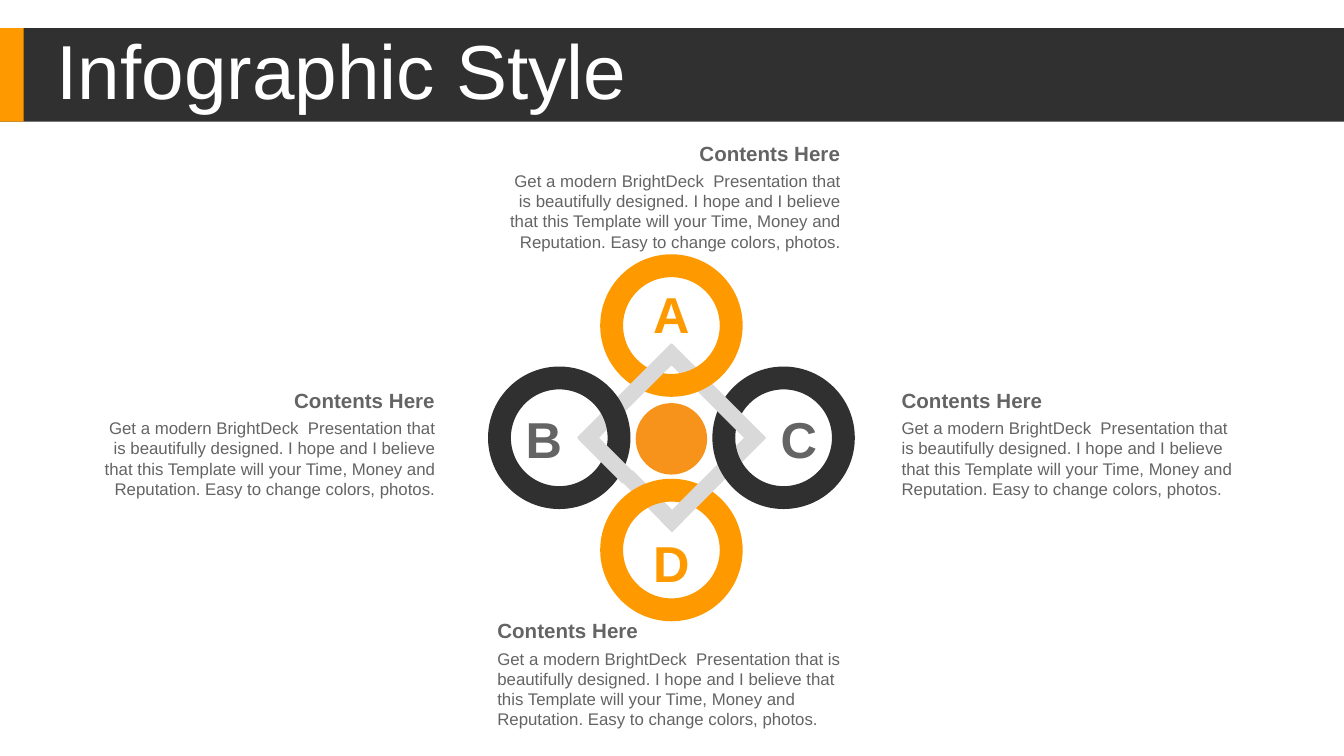
"""Build a slide with four linked rings around a disc, each ring with a caption."""
from pptx import Presentation
from pptx.dml.color import RGBColor
from pptx.enum.shapes import MSO_SHAPE
from pptx.enum.text import MSO_ANCHOR, PP_ALIGN
from pptx.util import Cm, Pt

ORANGE = RGBColor(0xFE, 0x99, 0x00)
COIN = RGBColor(0xF7, 0x93, 0x1A)
DARK = RGBColor(0x30, 0x30, 0x30)
GREY = RGBColor(0x64, 0x64, 0x64)
LIGHT = RGBColor(0xD9, 0xD9, 0xD9)
WHITE = RGBColor(0xFF, 0xFF, 0xFF)

MID_X, MID_Y = 12.69, 8.27
HEAD = "Contents Here"
BODY = ("Get a modern BrightDeck  Presentation that is beautifully designed. "
        "I hope and I believe that this Template will your Time, Money and "
        "Reputation. Easy to change colors, photos.")


class Painter:
    def __init__(self, slide, font="Arial"):
        self.slide = slide
        self.font = font

    def style(self, frame, text, size, color, bold=False, align=PP_ALIGN.LEFT):
        frame.text = text
        frame.word_wrap = True
        line = frame.paragraphs[0]
        line.alignment = align
        for run in line.runs:
            font = run.font
            font.name, font.size, font.bold = self.font, Pt(size), bold
            font.color.rgb = color

    def title(self, text, left, top, width, height):
        title = self.slide.shapes.title
        title.left, title.top = Cm(left), Cm(top)
        title.width, title.height = Cm(width), Cm(height)
        frame = title.text_frame
        self.style(frame, text, 41, WHITE)
        frame.vertical_anchor = MSO_ANCHOR.MIDDLE
        frame.margin_left = frame.margin_right = Cm(0.18)
        frame.margin_top = frame.margin_bottom = Cm(0.1)
        frame.paragraphs[0].line_spacing = 0.9
        title.element.getparent().append(title.element)

    def shape(self, kind, left, top, width, height, fill=None):
        shape = self.slide.shapes.add_shape(
            kind, Cm(left), Cm(top), Cm(width), Cm(height))
        shape.shadow.inherit = False
        shape.line.fill.background()
        if fill is None:
            shape.fill.background()
        else:
            shape.fill.solid()
            shape.fill.fore_color.rgb = fill
        return shape

    def rect(self, left, top, width, height, fill):
        return self.shape(MSO_SHAPE.RECTANGLE, left, top, width, height, fill)

    def disc(self, x, y, size, fill=None):
        return self.shape(MSO_SHAPE.OVAL, MID_X + x - size / 2,
                          MID_Y + y - size / 2, size, size, fill)

    def ring(self, x, y, color):
        ring = self.disc(x, y, 2.26)
        ring.line.color.rgb = color
        ring.line.width = Pt(12.25)

    def bar(self, x, y, length, angle):
        thick = 0.3
        bar = self.rect(MID_X + x - length / 2, MID_Y + y - thick / 2,
                        length, thick, LIGHT)
        bar.rotation = angle

    def label(self, text, left, top, width, height, size, color, **style):
        box = self.slide.shapes.add_textbox(
            Cm(left), Cm(top), Cm(width), Cm(height))
        self.style(box.text_frame, text, size, color, **style)
        return box.text_frame

    def letter(self, text, x, y, color):
        wide, high = 1.02, 1.14
        frame = self.label(text, MID_X + x - wide / 2, MID_Y + y - high / 2,
                           wide, high, 27, color, bold=True,
                           align=PP_ALIGN.CENTER)
        frame.margin_left = frame.margin_right = 0
        frame.margin_top = frame.margin_bottom = 0

    def caption(self, left, top, width, align):
        self.label(BODY, left, top + 0.57, width, 1.8, 9, GREY, align=align)
        self.label(HEAD, left, top, width, 0.74, 11, GREY, bold=True,
                   align=align)


def main():
    deck = Presentation()
    deck.slide_width, deck.slide_height = Cm(25.4), Cm(14.28)
    paint = Painter(deck.slides.add_slide(deck.slide_layouts[5]))

    paint.rect(0, 0.53, 25.4, 1.77, DARK)
    paint.rect(0, 0.53, 0.45, 1.77, ORANGE)
    paint.title("Infographic Style", 0.89, 0.66, 18.47, 1.5)

    gap, side = 2.12, 0.79
    paint.bar(-0.36, 1.2, 1.35, 45)
    paint.ring(0, gap, ORANGE)
    paint.bar(side, side, 2.51, 135)
    paint.ring(gap, 0, DARK)
    paint.bar(side, -side, 2.51, 45)
    paint.ring(0, -gap, ORANGE)
    paint.bar(-side, -side, 2.51, 315)
    paint.ring(-gap, 0, DARK)
    paint.bar(-1.24, 0.34, 1.19, 45)

    for text, x, y, color in (("A", 0, -2.36, ORANGE), ("C", 2.41, 0, GREY),
                              ("B", -2.41, 0, GREY), ("D", 0, 2.36, ORANGE)):
        paint.letter(text, x, y, color)

    for left, top, width, align in (
            (16.79, 7.2, 6.81, PP_ALIGN.LEFT),
            (9.15, 11.55, 7.13, PP_ALIGN.LEFT),
            (9.3, 2.53, 6.83, PP_ALIGN.RIGHT),
            (1.64, 7.2, 6.83, PP_ALIGN.RIGHT)):
        paint.caption(left, top, width, align)

    paint.disc(0, 0.02, 1.35, COIN)
    deck.save("out.pptx")


if __name__ == "__main__":
    main()
